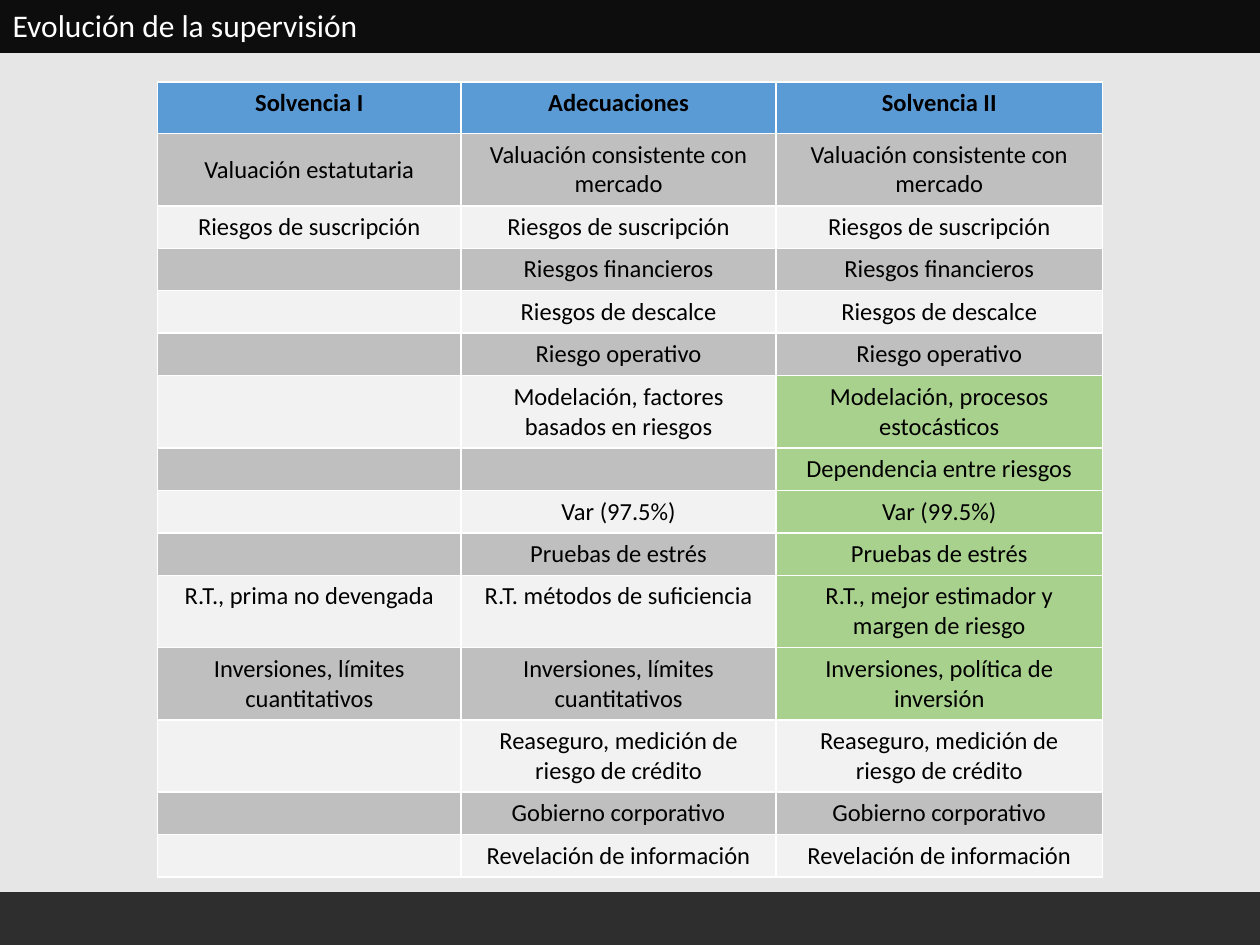
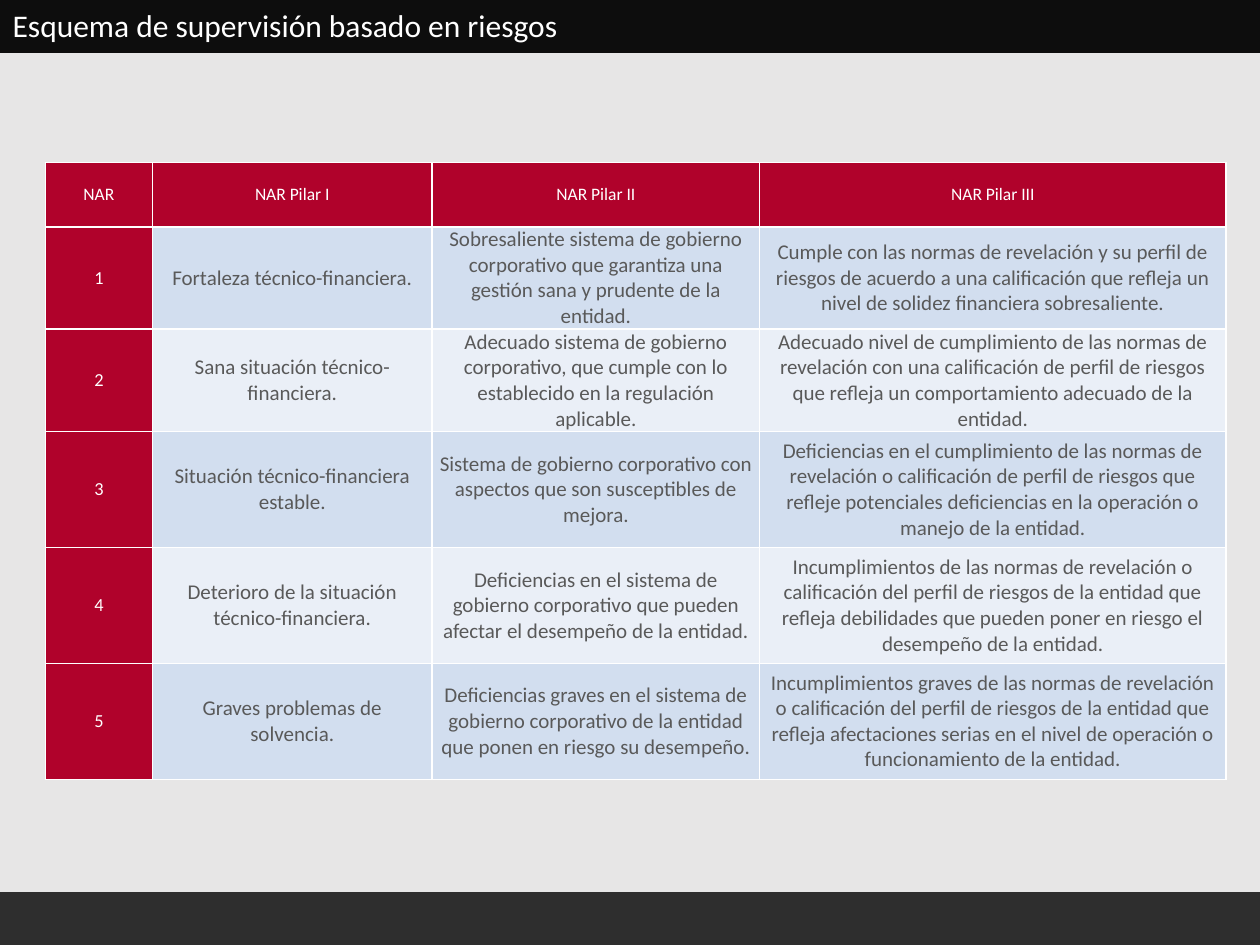
"""Build two slides of tables on insurance supervision."""
from lxml import etree
from pptx import Presentation
from pptx.dml.color import RGBColor
from pptx.enum.shapes import MSO_SHAPE
from pptx.enum.text import MSO_ANCHOR, MSO_AUTO_SIZE, PP_ALIGN
from pptx.oxml.ns import qn
from pptx.util import Inches, Pt

RECT = MSO_SHAPE.RECTANGLE
TOP, MIDDLE = MSO_ANCHOR.TOP, MSO_ANCHOR.MIDDLE
LEFT, CENTER = PP_ALIGN.LEFT, PP_ALIGN.CENTER
NO_AUTOFIT = MSO_AUTO_SIZE.NONE

BLACK = RGBColor(0x00, 0x00, 0x00)
WHITE = RGBColor(0xFF, 0xFF, 0xFF)
INK = RGBColor(0x0D, 0x0D, 0x0D)
PAPER = RGBColor(0xE7, 0xE6, 0xE6)
BLUE = RGBColor(0x5B, 0x9B, 0xD5)
GREEN = RGBColor(0xA9, 0xD1, 0x8E)
GRAYS = (RGBColor(0xBF, 0xBF, 0xBF), RGBColor(0xF2, 0xF2, 0xF2))
RED = RGBColor(0xB0, 0x02, 0x2B)
SLATE = RGBColor(0x59, 0x59, 0x59)
ICES = (RGBColor(0xD2, 0xDE, 0xEF), RGBColor(0xEA, 0xEF, 0xF7))

FONT = "Calibri"
BAND_H = 0.42

EVOLUTION = [
    ("Solvencia I", "Adecuaciones", "Solvencia II"),
    ("Valuación estatutaria", "Valuación consistente con mercado",
     "Valuación consistente con mercado"),
    ("Riesgos de suscripción",) * 3,
    ("", "Riesgos financieros", "Riesgos financieros"),
    ("", "Riesgos de descalce", "Riesgos de descalce"),
    ("", "Riesgo operativo", "Riesgo operativo"),
    ("", "Modelación, factores basados en riesgos",
     "Modelación, procesos estocásticos"),
    ("", "", "Dependencia entre riesgos"),
    ("", "Var (97.5%)", "Var (99.5%)"),
    ("", "Pruebas de estrés", "Pruebas de estrés"),
    ("R.T., prima no devengada", "R.T. métodos de suficiencia",
     "R.T., mejor estimador y margen de riesgo"),
    ("Inversiones, límites cuantitativos", "Inversiones, límites cuantitativos",
     "Inversiones, política de inversión"),
    ("", "Reaseguro, medición de riesgo de crédito",
     "Reaseguro, medición de riesgo de crédito"),
    ("", "Gobierno corporativo", "Gobierno corporativo"),
    ("", "Revelación de información", "Revelación de información"),
]
TWO_LINE_ROWS = (1, 6, 10, 11, 12)
NEW_RULES = range(6, 12)

PILLARS = [
    ("NAR", "NAR Pilar I", "NAR Pilar II", "NAR Pilar III"),
    ("1", "Fortaleza técnico-financiera.",
     "Sobresaliente sistema de gobierno corporativo que garantiza una gestión "
     "sana y prudente de la entidad.",
     "Cumple con las normas de revelación y su perfil de riesgos de acuerdo a una "
     "calificación que refleja un nivel de solidez financiera sobresaliente."),
    ("2", "Sana situación técnico-financiera.",
     "Adecuado sistema de gobierno corporativo, que cumple con lo establecido en "
     "la regulación aplicable.",
     "Adecuado nivel de cumplimiento de las normas de revelación con una "
     "calificación de perfil de riesgos que refleja un comportamiento adecuado "
     "de la entidad."),
    ("3", "Situación técnico-financiera estable.",
     "Sistema de gobierno corporativo con aspectos que son susceptibles de mejora.",
     "Deficiencias en el cumplimiento de las normas de revelación o calificación "
     "de perfil de riesgos que refleje potenciales deficiencias en la operación "
     "o manejo de la entidad."),
    ("4", "Deterioro de la situación técnico-financiera.",
     "Deficiencias en el sistema de gobierno corporativo que pueden afectar el "
     "desempeño de la entidad.",
     "Incumplimientos de las normas de revelación o calificación del perfil de "
     "riesgos de la entidad que refleja debilidades que pueden poner en riesgo "
     "el desempeño de la entidad."),
    ("5", "Graves problemas de solvencia.",
     "Deficiencias graves en el sistema de gobierno corporativo de la entidad "
     "que ponen en riesgo su desempeño.",
     "Incumplimientos graves de las normas de revelación o calificación del "
     "perfil de riesgos de la entidad que refleja afectaciones serias en el "
     "nivel de operación o funcionamiento de la entidad."),
]


def apply(obj, **values):
    """Set each given attribute on an object."""
    for name, value in values.items():
        setattr(obj, name, value)


class Deck:
    """Holds the shared style and the current slide."""

    def __init__(self):
        """Start a presentation on the title-only layout."""
        self.prs = Presentation()
        apply(self.prs, slide_width=Inches(10), slide_height=Inches(7.5))
        self.layout = self.prs.slide_layouts[5]
        self.layout.background.fill.solid()
        self.layout.background.fill.fore_color.rgb = PAPER
        self.s = None

    def slide(self, title):
        """Add a slide with its title; the first one also sets up the bands."""
        self.s = self.prs.slides.add_slide(self.layout)
        if len(self.prs.slides) == 1:
            self.band(0, INK)
            self.band(7.5 - BAND_H, BLACK, 80)
        self.title(title)

    def band(self, top, color, opacity=100):
        """Put a full-width band behind everything on the layout."""
        sp = self.s.shapes.add_shape(
            RECT, 0, Inches(top), Inches(10), Inches(BAND_H))
        sp.shadow.inherit = False
        sp.line.fill.background()
        sp.fill.solid()
        sp.fill.fore_color.rgb = color
        if opacity < 100:
            clr = sp._element.spPr.find(qn("a:solidFill"))[0]
            etree.SubElement(clr, qn("a:alpha"), val=str(opacity * 1000))
        self.layout.shapes._spTree.insert(2, sp._element)

    def title(self, text):
        """Place the title in the top band."""
        sp = self.s.shapes.title
        apply(sp, left=0, top=0, width=Inches(10), height=Inches(0.4))
        tf = sp.text_frame
        apply(tf, word_wrap=True, auto_size=NO_AUTOFIT, vertical_anchor=MIDDLE)
        self.text(tf, text, LEFT, size=Pt(18), color=WHITE)

    def text(self, tf, text, align, color, size, bold=False):
        """Fill a text frame with one formatted paragraph."""
        p = tf.paragraphs[0]
        p.alignment = align
        if not text:
            etree.SubElement(p._p, qn("a:endParaRPr"), sz=str(int(size.pt * 100)))
            return
        r = p.add_run()
        r.text = text
        apply(r.font, name=FONT, size=size, bold=bold)
        r.font.color.rgb = color

    def table(self, left, top, widths, heights, rows, style):
        """Draw a table; style(row, column) gives fill, anchor and font."""
        tbl = self.s.shapes.add_table(
            len(rows), len(widths), Inches(left), Inches(top),
            Inches(sum(widths)), Inches(sum(heights))).table
        apply(tbl, first_row=False, horz_banding=False)
        for col, width in zip(tbl.columns, widths):
            col.width = Inches(width)
        for i, (row, height) in enumerate(zip(rows, heights)):
            tbl.rows[i].height = Inches(height)
            for j, text in enumerate(row):
                self.cell(tbl.cell(i, j), text, **style(i, j))

    def cell(self, cell, text, fill, anchor, margins, **font):
        """Border, fill and label one table cell."""
        tc_pr = cell._tc.get_or_add_tcPr()
        for side in "LRTB":
            ln = etree.SubElement(tc_pr, qn(f"a:ln{side}"), w=str(Pt(1)))
            solid = etree.SubElement(ln, qn("a:solidFill"))
            etree.SubElement(solid, qn("a:srgbClr"), val=str(WHITE))
        cell.fill.solid()
        cell.fill.fore_color.rgb = fill
        side, end = (Inches(m) for m in margins)
        apply(cell, vertical_anchor=anchor, margin_left=side,
              margin_right=side, margin_top=end, margin_bottom=end)
        self.text(cell.text_frame, text, CENTER, **font)


def evolution_style(i, j):
    """Style a cell of the solvency table, new rules in green."""
    if i == 0:
        fill = BLUE
    elif j == 2 and i in NEW_RULES:
        fill = GREEN
    else:
        fill = GRAYS[(i - 1) % 2]
    return dict(fill=fill, anchor=MIDDLE if (i, j) == (1, 0) else TOP,
                margins=(0.1, 0.05), size=Pt(14), color=BLACK, bold=i == 0)


def pillar_style(i, j):
    """Style a cell of the pillar table, with red headings."""
    style = dict(anchor=MIDDLE, margins=(0.05, 0))
    if i == 0 or j == 0:
        return dict(style, fill=RED, color=WHITE, size=Pt(10.5 if i else 10))
    return dict(style, fill=ICES[(i - 1) % 2], color=SLATE, size=Pt(12))


def main():
    """Build and save the slides."""
    deck = Deck()
    deck.slide("Evolución de la supervisión")
    heights = [0.41] + [0.55 if i in TWO_LINE_ROWS else 0.32
                        for i in range(1, len(EVOLUTION))]
    deck.table(1.25, 0.65, [2.41, 2.5, 2.59], heights, EVOLUTION, evolution_style)

    deck.slide("Esquema de supervisión basado en riesgos")
    heights = [0.51] + [0.81] * 2 + [0.92] * 3
    deck.table(0.36, 1.29, [0.85, 2.22, 2.6, 3.7], heights, PILLARS, pillar_style)
    deck.prs.save("out.pptx")


if __name__ == "__main__":
    main()
